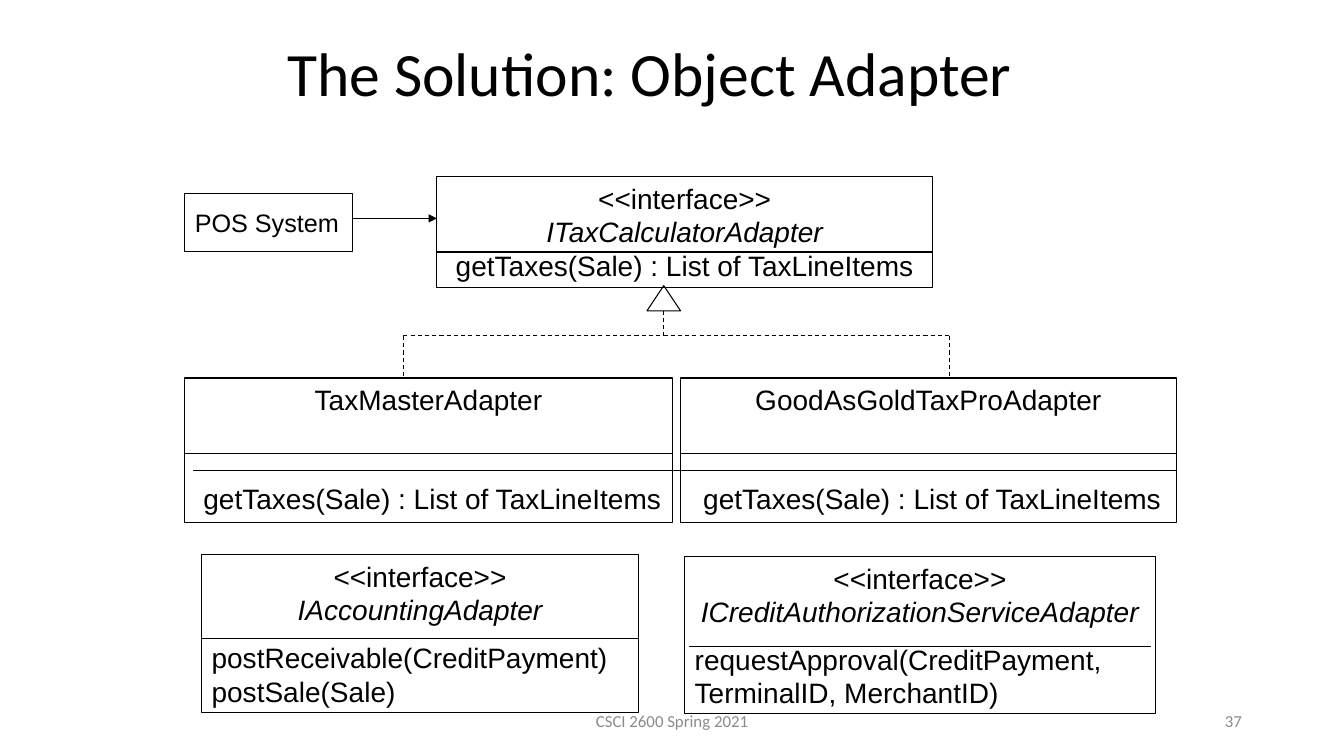
import pptx
import pptx.util
import pptx.dml.color
import pptx.enum.dml
import pptx.enum.shapes
import pptx.enum.text
import pptx.oxml.ns
import lxml.etree

COLORS = {"ink": "000000", "paper": "FFFFFF", "muted": "8B8B8B"}
SHAPE = pptx.enum.shapes.MSO_SHAPE
ALIGN = pptx.enum.text.PP_ALIGN
ANCHOR = pptx.enum.text.MSO_ANCHOR
METHOD = "getTaxes(Sale) : List of TaxLineItems"


def rgb(name):
    return pptx.dml.color.RGBColor.from_string(COLORS[name])


def apply(target, formats):
    for name, value in formats.items():
        setattr(target, name, value)


def line(text, align=ALIGN.CENTER, before=0, **font):
    """Describe one paragraph: its text, paragraph format and font format."""
    return text, {"alignment": align, "space_before": pptx.util.Pt(before)}, font


class Diagram:
    """Draws on one slide; lengths are columns and rows of a 160 by 90 grid."""

    def __init__(self):
        self.prs = pptx.Presentation()
        self.prs.slide_width = pptx.util.Inches(13.33)
        self.prs.slide_height = pptx.util.Inches(7.5)
        self.s = self.prs.slides.add_slide(self.prs.slide_layouts[6])
        self.font = {"name": "Arial", "size": 20, "color": "ink"}

    def grid(self, *cells):
        return [pptx.util.Inches(cell / 12) for cell in cells]

    def set_lines(self, sp, lines, **frame):
        tf = sp.text_frame
        apply(tf, {"word_wrap": True, **frame})
        for i, (text, layout, font) in enumerate(lines):
            p = tf.add_paragraph() if i else tf.paragraphs[0]
            apply(p, layout)
            r = p.add_run()
            r.text = text
            look = {**self.font, **font}
            r.font.color.rgb = rgb(look.pop("color"))
            look["size"] = pptx.util.Pt(look["size"])
            apply(r.font, look)

    def text(self, at, lines):
        sp = self.s.shapes.add_textbox(*self.grid(*at))
        self.set_lines(sp, lines, vertical_anchor=ANCHOR.MIDDLE)

    def shape(self, at, lines=(), kind=SHAPE.RECTANGLE, fill=None, **frame):
        sp = self.s.shapes.add_shape(kind, *self.grid(*at))
        sp.shadow.inherit = False
        if fill:
            sp.fill.solid()
            sp.fill.fore_color.rgb = rgb(fill)
        else:
            sp.fill.background()
        self.stroke(sp)
        self.set_lines(sp, lines, **{"vertical_anchor": ANCHOR.TOP, **frame})

    def stroke(self, sp):
        sp.line.color.rgb = rgb("ink")
        sp.line.width = pptx.util.Pt(0.75)

    def link(self, x1, y1, x2, y2, dashed=False, arrow=False):
        straight = pptx.enum.shapes.MSO_CONNECTOR.STRAIGHT
        cx = self.s.shapes.add_connector(straight, *self.grid(x1, y1, x2, y2))
        self.stroke(cx)
        if dashed:
            cx.line.dash_style = pptx.enum.dml.MSO_LINE.DASH
        qn = pptx.oxml.ns.qn
        props = cx.element.spPr
        if arrow:
            lxml.etree.SubElement(props.get_or_add_ln(), qn("a:tailEnd"), type="triangle")
        lxml.etree.SubElement(props, qn("a:effectLst"))


def main():
    d = Diagram()
    d.text((33, 1, 102, 15), [
        line("The Solution: Object Adapter", ALIGN.LEFT, name="Calibri", size=44)])

    d.shape((52, 21, 59, 13.2), [
        line("<<interface>>"), line("ITaxCalculatorAdapter", italic=True), line(METHOD)])
    d.link(52, 30, 111, 30)

    # Adapter classes: left edge, width, name
    for x, w, name in [(22, 58, "TaxMasterAdapter"), (81, 59, "GoodAsGoldTaxProAdapter")]:
        d.shape((x, 45, w, 17.2), [line(name), line(" " + METHOD, before=46)])
        d.link(x, 54, x + w, 54)
    d.link(23, 56, 81, 56)
    d.link(81, 56, 140, 56)

    # Realization tree
    d.shape((77, 34, 4, 3), kind=SHAPE.ISOSCELES_TRIANGLE)
    for ends in [(48, 40, 113, 40), (48, 40, 48, 45), (113, 40, 113, 45), (79, 37, 79, 40)]:
        d.link(*ends, dashed=True)

    # Other interfaces: box, name, methods, divider
    for at, name, methods, (x1, x2, y) in [
        ((24, 66, 52, 18.8), "IAccountingAdapter",
         ["postReceivable(CreditPayment)", "postSale(Sale)"], (24, 76, 76)),
        ((81.5, 66.2, 56, 18.8), "ICreditAuthorizationServiceAdapter",
         ["requestApproval(CreditPayment, TerminalID, MerchantID)"], (82, 137, 77)),
    ]:
        body = [line(m, ALIGN.LEFT, 0 if i else 10) for i, m in enumerate(methods)]
        d.shape(at, [line("<<interface>>"), line(name, italic=True), *body])
        d.link(x1, y, x2, y)

    d.shape((22, 23, 20, 7), [line("POS System", ALIGN.LEFT, size=18)],
            fill="paper", vertical_anchor=ANCHOR.MIDDLE, word_wrap=False)
    d.link(42, 26, 52, 26, arrow=True)

    small = {"name": "Calibri", "size": 12, "color": "muted"}
    d.text((53, 83.4, 54, 4.8), [line("CSCI 2600 Spring 2021", **small)])
    d.text((113, 83.4, 36, 4.8), [line("37", ALIGN.RIGHT, **small)])
    d.prs.save("out.pptx")


if __name__ == "__main__":
    main()
